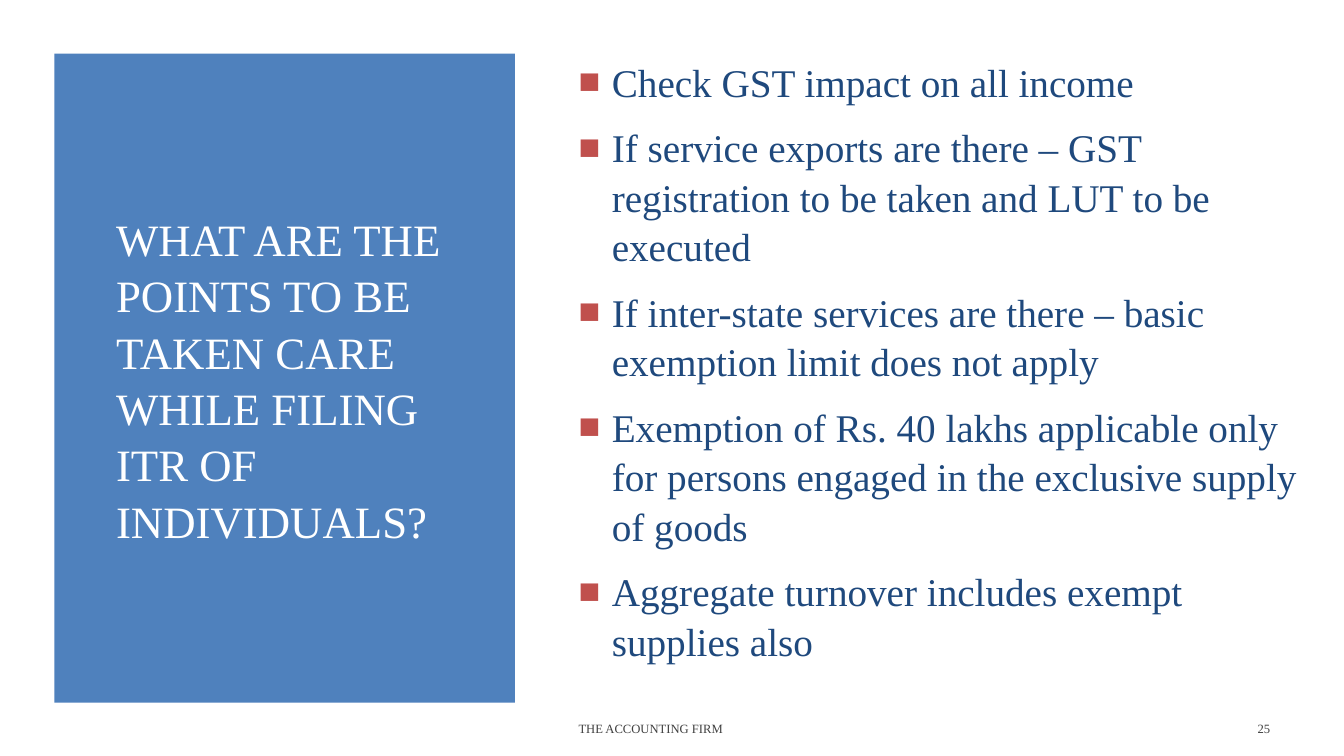
"""Build the slide on points to check when filing ITR of individuals."""
from lxml import etree
from pptx import Presentation
from pptx.dml.color import RGBColor
from pptx.enum.shapes import MSO_SHAPE
from pptx.enum.text import MSO_ANCHOR, PP_ALIGN
from pptx.oxml.ns import qn
from pptx.util import Cm, Pt

WHITE = RGBColor(0xFF, 0xFF, 0xFF)
BLUE = RGBColor(0x4F, 0x81, 0xBD)
NAVY = RGBColor(0x1F, 0x49, 0x7D)
RED = RGBColor(0xC0, 0x50, 0x4D)
GREY = RGBColor(0x40, 0x40, 0x40)
RECT = MSO_SHAPE.RECTANGLE
MIDDLE = MSO_ANCHOR.MIDDLE
LEFT, RIGHT = PP_ALIGN.LEFT, PP_ALIGN.RIGHT
FACE = "Times New Roman"

POINTS = [
    "Check GST impact on all income",
    "If service exports are there – GST registration to be taken and LUT to be executed",
    "If inter-state services are there – basic exemption limit does not apply",
    "Exemption of Rs. 40 lakhs applicable only for persons engaged in the exclusive supply of goods",
    "Aggregate turnover includes exempt supplies also",
]


def fill_text(shape, lines, size, color, align=LEFT, spacing=1.0):
    frame = shape.text_frame
    frame.word_wrap = True
    frame.vertical_anchor = MIDDLE
    frame.text = "\n".join(lines)
    for para in frame.paragraphs:
        para.alignment = align
        para.line_spacing = spacing
        style = {"name": FACE, "size": Pt(size)}
        for run in para.runs:
            for key, value in style.items():
                setattr(run.font, key, value)
            run.font.color.rgb = color
    return frame


def add_bullet(para):
    props = para._p.get_or_add_pPr()
    props.set("marL", str(Cm(0.84)))
    props.set("indent", str(-Cm(0.84)))
    tint = etree.SubElement(props, qn("a:buClr"))
    etree.SubElement(tint, qn("a:srgbClr"), val=str(RED))
    etree.SubElement(props, qn("a:buSzPct"), val="92000")
    etree.SubElement(props, qn("a:buFont"), typeface=FACE)
    etree.SubElement(props, qn("a:buChar"), char="■")


deck = Presentation()
deck.slide_width, deck.slide_height = Cm(33.87), Cm(19.05)
slide = deck.slides.add_slide(deck.slide_layouts[5])
shapes = slide.shapes

title = shapes.title
panel = shapes.add_shape(RECT, Cm(1.37), Cm(1.35), Cm(11.61), Cm(16.36))
panel.shadow.inherit = False
panel.fill.solid()
panel.fill.fore_color.rgb = BLUE
panel.line.fill.background()
title._element.addprevious(panel._element)

place = {"left": Cm(2.67), "top": Cm(3.1), "width": Cm(9.09), "height": Cm(12.85)}
for key, value in place.items():
    setattr(title, key, value)
heading = "WHAT ARE THE POINTS TO BE TAKEN CARE WHILE FILING ITR OF INDIVIDUALS?"
fill_text(title, [heading], 32, WHITE, spacing=1.05)

body = shapes.add_textbox(Cm(14.33), Cm(1.35), Cm(18.97), Cm(16.28))
frame = fill_text(body, POINTS, 28, NAVY, spacing=1.05)
frame.margin_bottom = Cm(0.97)
for order, para in enumerate(frame.paragraphs):
    para.space_before = Pt(5.6 if order else 0)
    para.space_after = Pt(6)
    add_bullet(para)

FOOTERS = [
    ("THE ACCOUNTING FIRM", 14.33, 13.56, LEFT),
    ("25", 29.34, 2.92, RIGHT),
]
for words, left, width, align in FOOTERS:
    box = shapes.add_textbox(Cm(left), Cm(17.85), Cm(width), Cm(1.02))
    fill_text(box, [words], 9, GREY, align)

deck.save("out.pptx")
